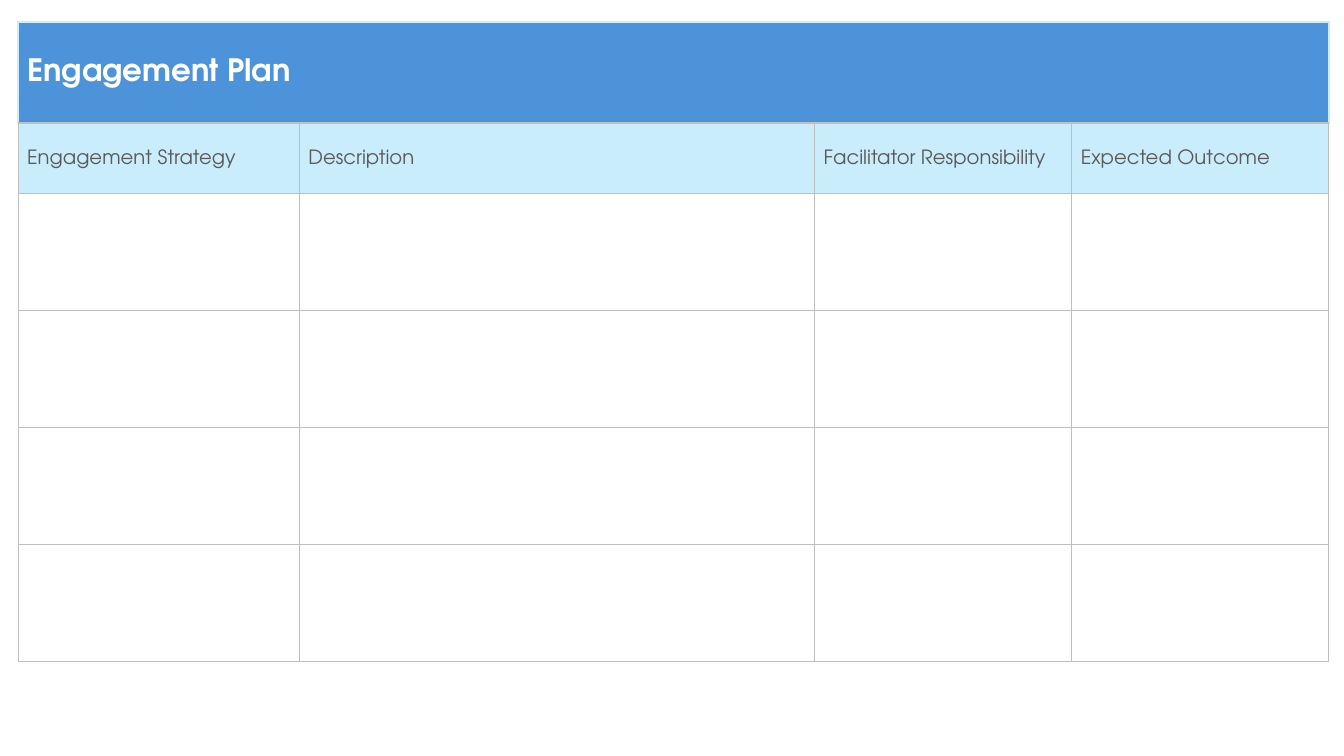
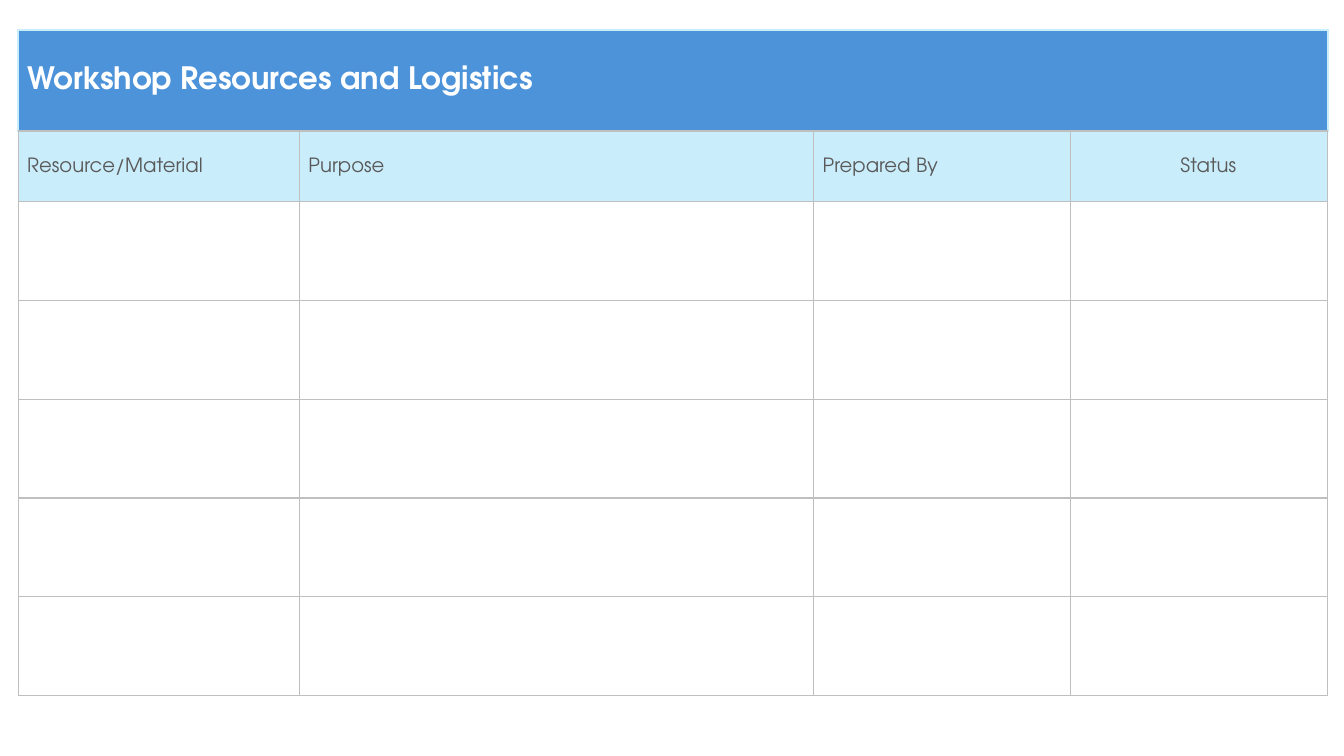
"""Build two workshop planning tables, one on each slide."""
import pptx
import pptx.dml.color
import pptx.enum.text
import pptx.oxml
import pptx.oxml.ns
import pptx.util

Inches = pptx.util.Inches
Pt = pptx.util.Pt
ALIGN = pptx.enum.text.PP_ALIGN
MIDDLE = pptx.enum.text.MSO_ANCHOR.MIDDLE

PLANS = [
    {
        "title": "Engagement Plan",
        "heads": ["Engagement Strategy", "Description",
                  "Facilitator Responsibility", "Expected Outcome"],
        "top": 0.22, "cols": [2.79, 5.11, 2.55, 2.55],
        "blanks": 4, "height": 1.16, "center": [],
    },
    {
        "title": "Workshop Resources and Logistics",
        "heads": ["Resource/Material", "Purpose", "Prepared By", "Status"],
        "top": 0.3, "cols": [2.79, 5.1, 2.55, 2.55],
        "blanks": 5, "height": 0.98, "center": [3],
    },
]

THEME = {
    "font": "TeX Gyre Adventor",
    "left": 0.18,
    "rows": [1, 0.7],
    "title": {"fill": "4D93D9", "color": "FFFFFF", "size": 22, "bold": True},
    "head": {"fill": "CAEDFB", "color": "595959", "size": 14, "bold": False},
    "grid": ("BFBFBF", 1),
    "frame": ("CAEDFB", 1.5),
}
INSETS = {"margin_left": 0.09, "margin_top": 0.01,
          "margin_right": 0.01, "margin_bottom": 0}
INDENT = 0.19


def rgb(code):
    return pptx.dml.color.RGBColor.from_string(code)


def border(cell, edges):
    props = cell._tc.get_or_add_tcPr()
    for side, (color, width) in edges.items():
        props.append(pptx.oxml.parse_xml(
            f'<a:ln{side} {pptx.oxml.ns.nsdecls("a")} w="{Pt(width)}">'
            f'<a:solidFill><a:srgbClr val="{color}"/></a:solidFill>'
            f'</a:ln{side}>'))


def write(cell, text, style, center=False):
    cell.fill.solid()
    cell.fill.fore_color.rgb = rgb(style["fill"])
    cell.vertical_anchor = MIDDLE
    for name, value in INSETS.items():
        setattr(cell, name, Inches(value))
    if center:
        cell.margin_left = Inches(INDENT)
    para = cell.text_frame.paragraphs[0]
    para.alignment = ALIGN.CENTER if center else ALIGN.LEFT
    run = para.add_run()
    run.text = text
    looks = {"name": THEME["font"], "size": Pt(style["size"]),
             "bold": style["bold"]}
    for name, value in looks.items():
        setattr(run.font, name, value)
    run.font.color.rgb = rgb(style["color"])


def draw(slide, plan):
    cols = plan["cols"]
    rows = THEME["rows"] + [plan["height"]] * plan["blanks"]
    table = slide.shapes.add_table(
        len(rows), len(cols), Inches(THEME["left"]), Inches(plan["top"]),
        Inches(sum(cols)), Inches(sum(rows))).table
    table.first_row = table.horz_banding = False
    for col, width in zip(table.columns, cols):
        col.width = Inches(width)
    for index, (row, height) in enumerate(zip(table.rows, rows)):
        row.height = Inches(height)
        edge = THEME["grid"] if index else THEME["frame"]
        for cell in row.cells:
            border(cell, {"L": edge, "R": edge, "T": edge, "B": THEME["grid"]})
            cell.fill.background()
    table.cell(0, 0).merge(table.cell(0, len(cols) - 1))
    write(table.cell(0, 0), plan["title"], THEME["title"])
    for index, text in enumerate(plan["heads"]):
        write(table.cell(1, index), text, THEME["head"],
              index in plan["center"])


def main():
    deck = pptx.Presentation()
    deck.slide_width = Inches(13.33)
    deck.slide_height = Inches(7.5)
    for plan in PLANS:
        draw(deck.slides.add_slide(deck.slide_layouts[6]), plan)
    deck.save("out.pptx")


if __name__ == "__main__":
    main()
